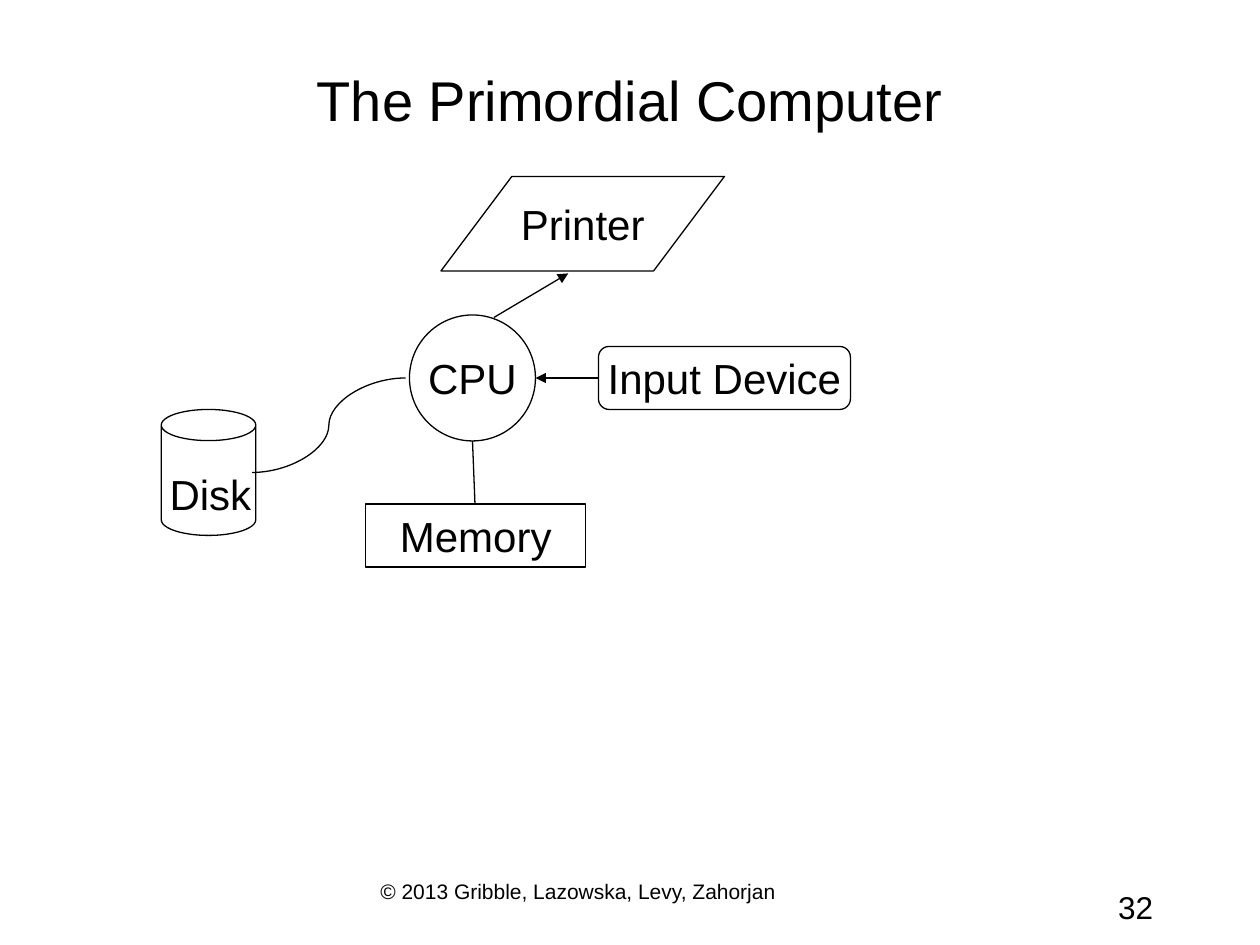
from typing import NamedTuple

from lxml.etree import SubElement
from pptx import Presentation
from pptx.dml.color import RGBColor
from pptx.enum.shapes import MSO_CONNECTOR as LINK, MSO_SHAPE as SHAPE
from pptx.enum.text import MSO_ANCHOR as ANCHOR, PP_ALIGN as ALIGN
from pptx.oxml.ns import qn
from pptx.util import Inches, Pt

INK = "000000"


class Node(NamedTuple):
    kind: SHAPE
    box: tuple
    text: str = ""
    adj: float | None = None


class Wire(NamedTuple):
    start: tuple
    end: tuple
    arrow: bool = False
    kind: LINK = LINK.STRAIGHT


class Label(NamedTuple):
    box: tuple
    text: str
    size: int
    align: ALIGN


NODES = [
    Node(SHAPE.OVAL, (3.25, 2.5, 1, 1), "CPU"),
    Node(SHAPE.CAN, (1.28, 3.25, 0.75, 1), adj=0.33),
    Node(SHAPE.RECTANGLE, (2.9, 4, 1.75, 0.5), "Memory"),
    Node(SHAPE.PARALLELOGRAM, (3.5, 1.4, 2.25, 0.75), "Printer", 0.75),
    Node(SHAPE.ROUNDED_RECTANGLE, (4.75, 2.75, 2, 0.5), "Input Device", 0.17),
]
WIRES = [
    Wire((2, 3.75), (3.22, 3), kind=LINK.CURVE),
    Wire((3.75, 3.5), (3.77, 4)),
    Wire((3.92, 2.52), (4.51, 2.17), arrow=True),
    Wire((4.75, 3), (4.25, 3), arrow=True),
]
LABELS = [
    Label((1.17, 3.67, 1, 0.5), "Disk", 24, ALIGN.CENTER),
    Label((2.92, 6.92, 4.08, 0.17), "© 2013 Gribble, Lazowska, Levy, Zahorjan",
          12, ALIGN.LEFT),
    Label((7.17, 7, 2.08, 0.33), "32", 18, ALIGN.RIGHT),
]


def paint(color, tone: str) -> None:
    color.rgb = RGBColor.from_string(tone)


def write(frame, text: str, size: int, align: ALIGN, **form) -> None:
    """Put one styled line of text in a frame."""
    for name, value in form.items():
        setattr(frame, name, value)
    para = frame.paragraphs[0]
    para.alignment = align
    run = para.add_run()
    run.text = text
    for name, value in {"name": "Arial", "size": Pt(size)}.items():
        setattr(run.font, name, value)
    paint(run.font.color, INK)


def stroke(line) -> None:
    line.width = Pt(0.75)
    paint(line.color, INK)


def draw_node(slide, node: Node) -> None:
    shape = slide.shapes.add_shape(node.kind, *map(Inches, node.box))
    shape.shadow.inherit = False
    shape.fill.background()
    stroke(shape.line)
    if node.adj is not None:
        shape.adjustments[0] = node.adj
    if node.text:
        write(shape.text_frame, node.text, 24, ALIGN.CENTER,
              word_wrap=False, vertical_anchor=ANCHOR.MIDDLE)


def draw_wire(slide, wire: Wire) -> None:
    link = slide.shapes.add_connector(
        wire.kind, *map(Inches, wire.start + wire.end))
    stroke(link.line)
    if wire.arrow:
        SubElement(link.line._get_or_add_ln(), qn("a:tailEnd"), type="triangle")
    SubElement(link._element.spPr, qn("a:effectLst"))


def draw_label(slide, label: Label) -> None:
    box = slide.shapes.add_textbox(*map(Inches, label.box))
    write(box.text_frame, label.text, label.size, label.align,
          word_wrap=True, vertical_anchor=ANCHOR.TOP)


def main() -> None:
    deck = Presentation()
    deck.slide_width, deck.slide_height = Inches(10), Inches(7.5)
    slide = deck.slides.add_slide(deck.slide_layouts[5])

    # Title
    title = slide.shapes.title
    spot = {"left": 0.75, "top": 0.36, "width": 8.5, "height": 0.85}
    for name, value in spot.items():
        setattr(title, name, Inches(value))
    write(title.text_frame, "The Primordial Computer", 32, ALIGN.CENTER,
          vertical_anchor=ANCHOR.MIDDLE)

    # Diagram and footer
    for node in NODES:
        draw_node(slide, node)
    for wire in WIRES:
        draw_wire(slide, wire)
    for label in LABELS:
        draw_label(slide, label)

    deck.save("out.pptx")


if __name__ == "__main__":
    main()
